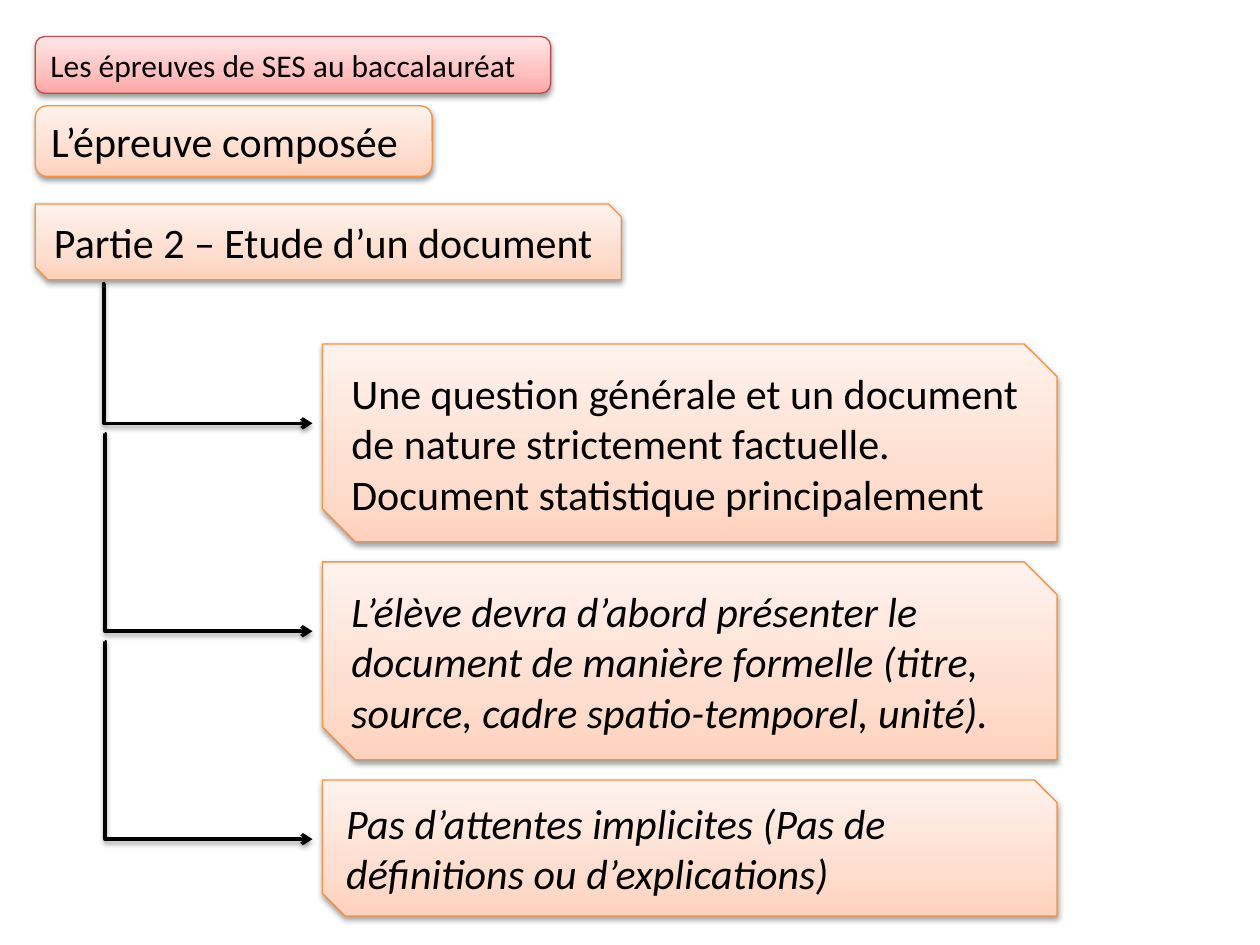
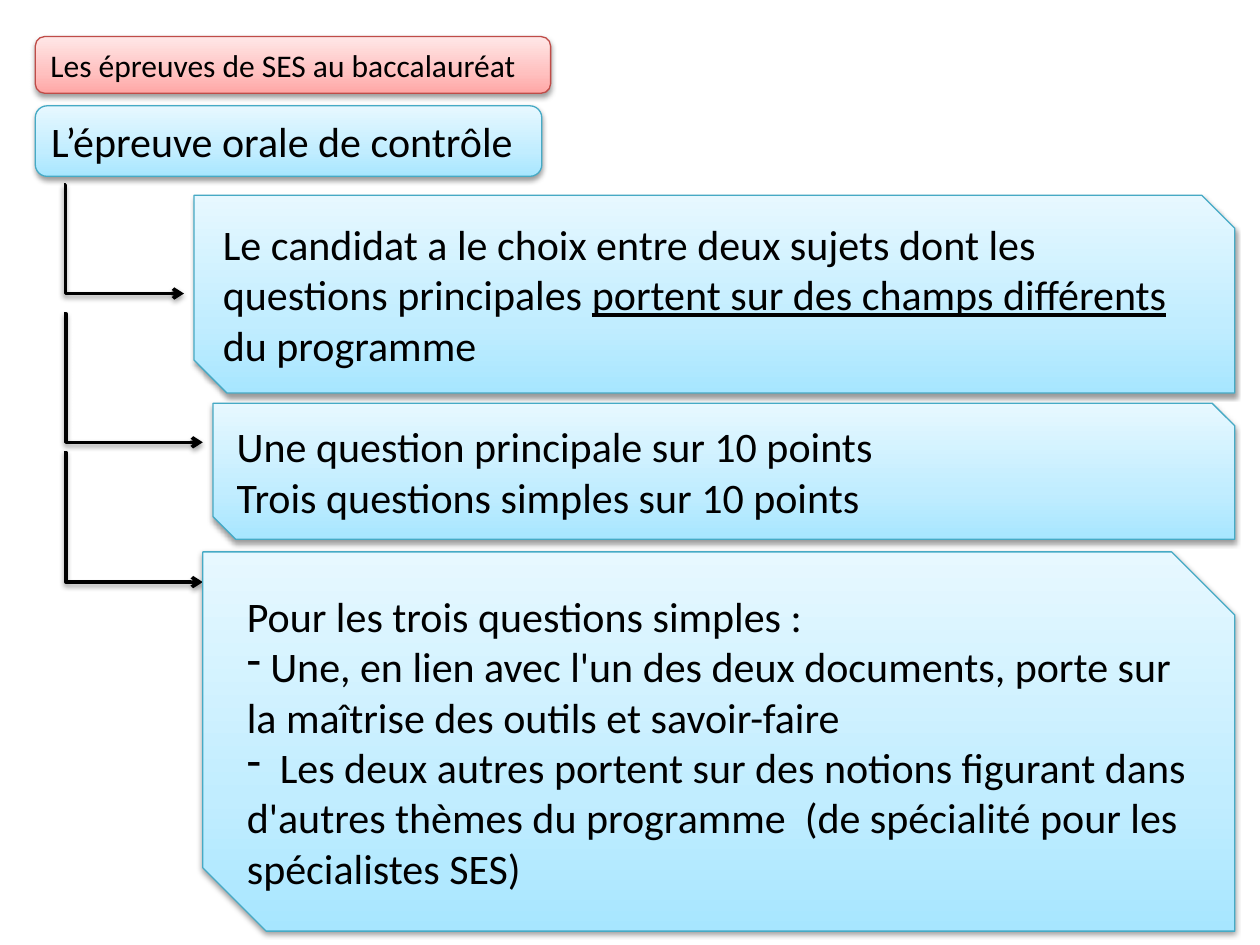
import copy
import pptx
import pptx.util
import pptx.dml.color
import pptx.enum.shapes
import pptx.enum.text
import pptx.oxml
import pptx.oxml.ns

PX = 9144
FONT = "Calibri"
BLACK = "000000"
RED = ("BF4C48", "FFA6A5", "FFC0BF", "FFE7E7")
ORANGE = ("F69240", "FFD2BD", "FFDED0", "FFF2ED")
BLUE = ("46AAC5", "A7E6FF", "C1EDFF", "E7F8FF")
STOPS = (0, 0.35, 1)
KIND = pptx.enum.shapes.MSO_SHAPE
ROUND, SNIP = KIND.ROUNDED_RECTANGLE, KIND.SNIP_2_DIAG_RECTANGLE
SHADOW = (
    '<a:effectLst %s><a:outerShdw blurRad="40000" dist="20000" dir="5400000" rotWithShape="0">'
    '<a:srgbClr val="000000"><a:alpha val="38000"/></a:srgbClr></a:outerShdw></a:effectLst>'
)


def color(code):
    return pptx.dml.color.RGBColor.from_string(code)


def node(text):
    return pptx.oxml.parse_xml(text % pptx.oxml.ns.nsdecls("a"))


def tag(name):
    return pptx.oxml.ns.qn(name)


def write(frame, text, size=24, italic=None):
    frame.word_wrap = True
    frame.auto_size = pptx.enum.text.MSO_AUTO_SIZE.SHAPE_TO_FIT_TEXT
    for i, line in enumerate(text.split("\n")):
        par = frame.add_paragraph() if i else frame.paragraphs[0]
        par.alignment = pptx.enum.text.PP_ALIGN.LEFT
        if line.startswith("-"):
            line = line[1:]
            props = par._p.get_or_add_pPr()
            props.append(node("<a:buFontTx %s/>"))
            props.append(node('<a:buChar %s char="-"/>'))
        for j, part in enumerate(line.split("_")):
            run = par.add_run()
            run.text = part
            font = run.font
            font.name, font.size = FONT, pptx.util.Pt(size)
            font.color.rgb = color(BLACK)
            font.italic = italic
            font.underline = True if j % 2 else None


class Deck:
    def __init__(self):
        self.prs = pptx.Presentation()
        self.prs.slide_width, self.prs.slide_height = 1000 * PX, 750 * PX

    def page(self, tone, title, width):
        self.shapes = self.prs.slides.add_slide(self.prs.slide_layouts[6]).shapes
        self.tone = RED
        self.box(28, 29, 409, 45, "Les épreuves de SES au baccalauréat", ROUND, size=18)
        self.tone = tone
        self.box(28, 84, width, 56, title, ROUND)

    def box(self, left, top, width, height, text, kind=SNIP, **style):
        shape = self.shapes.add_shape(kind, left * PX, top * PX, width * PX, height * PX)
        edge, *tints = self.tone
        shape.fill.gradient()
        shape.fill.gradient_angle = 90
        props = shape._element.spPr
        first = props.find(".//" + tag("a:gs"))
        first.addnext(copy.deepcopy(first))
        for stop, place, tint in zip(shape.fill.gradient_stops, STOPS, tints):
            stop.position = place
            stop.color.rgb = color(tint)
        shape.line.color.rgb = color(edge)
        shape.line.width = pptx.util.Pt(0.75)
        props.append(node(SHADOW))
        write(shape.text_frame, text, **style)

    def arrow(self, left, top, right, base, bend):
        kind = pptx.enum.shapes.MSO_CONNECTOR.ELBOW
        line = self.shapes.add_connector(kind, left * PX, top * PX, right * PX, base * PX)
        line.line.color.rgb = color(BLACK)
        line.line.width = pptx.util.Pt(2)
        props = line._element.spPr
        props.find(tag("a:ln")).append(node('<a:tailEnd %s type="arrow"/>'))
        guide = node('<a:gd %s name="adj1"/>')
        guide.set("fmla", f"val {bend}")
        props.find(".//" + tag("a:avLst")).append(guide)
        props.append(node(SHADOW))


def main():
    deck = Deck()

    deck.page(ORANGE, "L’épreuve composée", 315)
    deck.box(28, 162, 465, 60, "Partie 2 – Etude d’un document")
    for start, end, bend, top, height, italic, text in (
        (225, 336, -400, 273, 157, None,
         "Une question générale et un document de nature strictement factuelle. "
         "Document statistique principalement"),
        (344, 501, 300, 446, 157, True,
         "L’élève devra d’abord présenter le document de manière formelle "
         "(titre, source, cadre spatio-temporel, unité)."),
        (509, 666, 300, 619, 108, True,
         "Pas d’attentes implicites (Pas de définitions ou d’explications)"),
    ):
        deck.arrow(83, start, 248, end, bend)
        deck.box(256, top, 583, height, text, italic=italic)

    deck.page(BLUE, "L’épreuve orale de contrôle", 402)
    edge = 980
    for start, tip, end, bend, left, top, height, text in (
        (147, 146, 233, 900, 154, 155, 157,
         "Le candidat a le choix entre deux sujets dont les questions principales "
         "_portent sur des champs différents _du programme"),
        (249, 161, 351, 1400, 169, 320, 108,
         "Une question principale sur 10 points\nTrois questions simples sur 10 points"),
        (359, 161, 462, 1400, 161, 438, 301,
         "Pour les trois questions simples :\n"
         "- Une, en lien avec l'un des deux documents, porte sur la maîtrise des outils "
         "et savoir-faire\n"
         "-  Les deux autres portent sur des notions figurant dans d'autres thèmes du "
         "programme  (de spécialité pour les spécialistes SES)"),
    ):
        deck.arrow(51, start, tip, end, bend)
        deck.box(left, top, edge - left, height, text)

    deck.prs.save("out.pptx")


if __name__ == "__main__":
    main()
